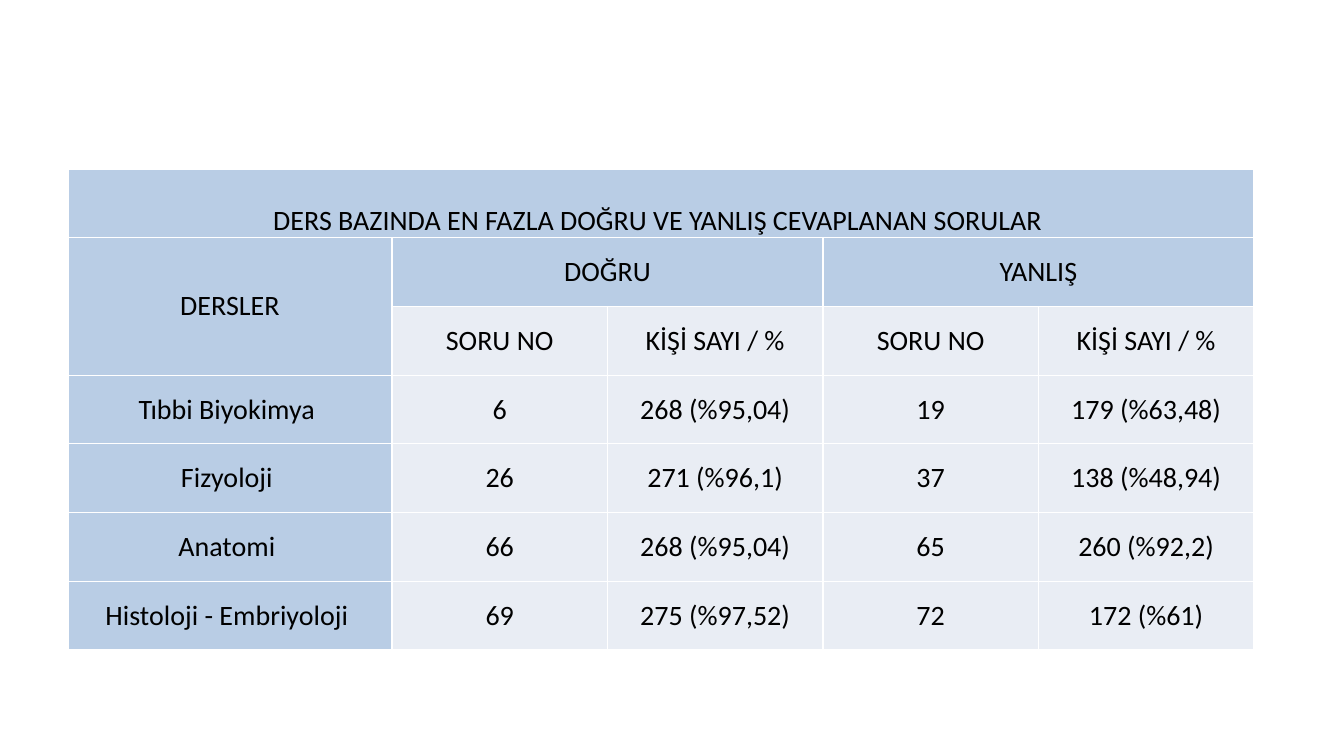
import lxml.etree
import pptx
import pptx.dml.color
import pptx.enum.text
import pptx.oxml.ns
import pptx.util

TITLE = "DERS BAZINDA EN FAZLA DOĞRU VE YANLIŞ CEVAPLANAN SORULAR "
COURSES_HEADING = "DERSLER"
ANSWER_GROUPS = ["DOĞRU", "YANLIŞ"]
GROUP_FIELDS = ["SORU NO", "KİŞİ SAYI / %"]
COURSES = [
    ("Tıbbi Biyokimya ", "6", "268 (%95,04)", "19", "179 (%63,48)"),
    ("Fizyoloji ", "26", "271 (%96,1)", "37", "138 (%48,94)"),
    ("Anatomi ", "66", "268 (%95,04)", "65", "260 (%92,2)"),
    ("Histoloji - Embriyoloji ", "69", "275 (%97,52)", "72", "172 (%61)"),
]

HEADING_BLUE = pptx.dml.color.RGBColor(0xB9, 0xCD, 0xE5)
VALUE_GREY = pptx.dml.color.RGBColor(0xE9, 0xED, 0xF4)
BORDER_WHITE = pptx.dml.color.RGBColor(0xFF, 0xFF, 0xFF)
TEXT_BLACK = pptx.dml.color.RGBColor(0x00, 0x00, 0x00)

SLIDE_WIDTH, SLIDE_HEIGHT = 1344, 756
EMU_PER_PX = 12192000 / SLIDE_WIDTH
TABLE_LEFT, TABLE_TOP, TABLE_WIDTH, TABLE_HEIGHT = 68, 169, 1186, 481
COURSE_WIDTH = 324
HEADING_ROWS = 3

MIDDLE = pptx.enum.text.MSO_ANCHOR.MIDDLE
BOTTOM = pptx.enum.text.MSO_ANCHOR.BOTTOM


def emu(px):
    return pptx.util.Emu(round(px * EMU_PER_PX))


def add_borders(cell):
    properties = cell._tc.get_or_add_tcPr()
    for side in ("a:lnL", "a:lnR", "a:lnT", "a:lnB"):
        line = lxml.etree.SubElement(properties, pptx.oxml.ns.qn(side), w=str(pptx.util.Pt(1)))
        fill = lxml.etree.SubElement(line, pptx.oxml.ns.qn("a:solidFill"))
        lxml.etree.SubElement(fill, pptx.oxml.ns.qn("a:srgbClr"), val=str(BORDER_WHITE))


def write(cell, text, *, anchor=MIDDLE, size=20, font="Calibri", color=TEXT_BLACK):
    cell.vertical_anchor = anchor
    paragraph = cell.text_frame.paragraphs[0]
    paragraph.alignment = pptx.enum.text.PP_ALIGN.CENTER
    run = paragraph.add_run()
    run.text = text
    run.font.size = pptx.util.Pt(size)
    run.font.name = font
    run.font.color.rgb = color


def add_results_table(slide):
    row_count = HEADING_ROWS + len(COURSES)
    group_size = len(GROUP_FIELDS)
    value_count = group_size * len(ANSWER_GROUPS)
    results = slide.shapes.add_table(
        row_count, 1 + value_count,
        emu(TABLE_LEFT), emu(TABLE_TOP), emu(TABLE_WIDTH), emu(TABLE_HEIGHT),
    ).table
    results.first_row = False
    results.horz_banding = False

    for row in results.rows:
        row.height = emu(TABLE_HEIGHT / row_count)
    value_width = (TABLE_WIDTH - COURSE_WIDTH) / value_count
    for index, column in enumerate(results.columns):
        column.width = emu(value_width if index else COURSE_WIDTH)

    for row in range(row_count):
        for column in range(1 + value_count):
            cell = results.cell(row, column)
            cell.margin_left = cell.margin_right = 0
            cell.margin_top = cell.margin_bottom = 0
            add_borders(cell)
            is_heading = row < HEADING_ROWS - 1 or column == 0
            cell.fill.solid()
            cell.fill.fore_color.rgb = HEADING_BLUE if is_heading else VALUE_GREY

    results.cell(0, 0).merge(results.cell(0, value_count))
    write(results.cell(0, 0), TITLE, anchor=BOTTOM)
    results.cell(1, 0).merge(results.cell(2, 0))
    write(results.cell(1, 0), COURSES_HEADING)

    for index, group in enumerate(ANSWER_GROUPS):
        first = 1 + index * group_size
        results.cell(1, first).merge(results.cell(1, first + group_size - 1))
        write(results.cell(1, first), group)
        for offset, field in enumerate(GROUP_FIELDS):
            write(results.cell(2, first + offset), field)

    for row, course in enumerate(COURSES, start=HEADING_ROWS):
        for column, text in enumerate(course):
            write(results.cell(row, column), text)


def main():
    presentation = pptx.Presentation()
    presentation.slide_width = emu(SLIDE_WIDTH)
    presentation.slide_height = emu(SLIDE_HEIGHT)
    slide = presentation.slides.add_slide(presentation.slide_layouts[6])
    add_results_table(slide)
    presentation.save("out.pptx")


if __name__ == "__main__":
    main()
